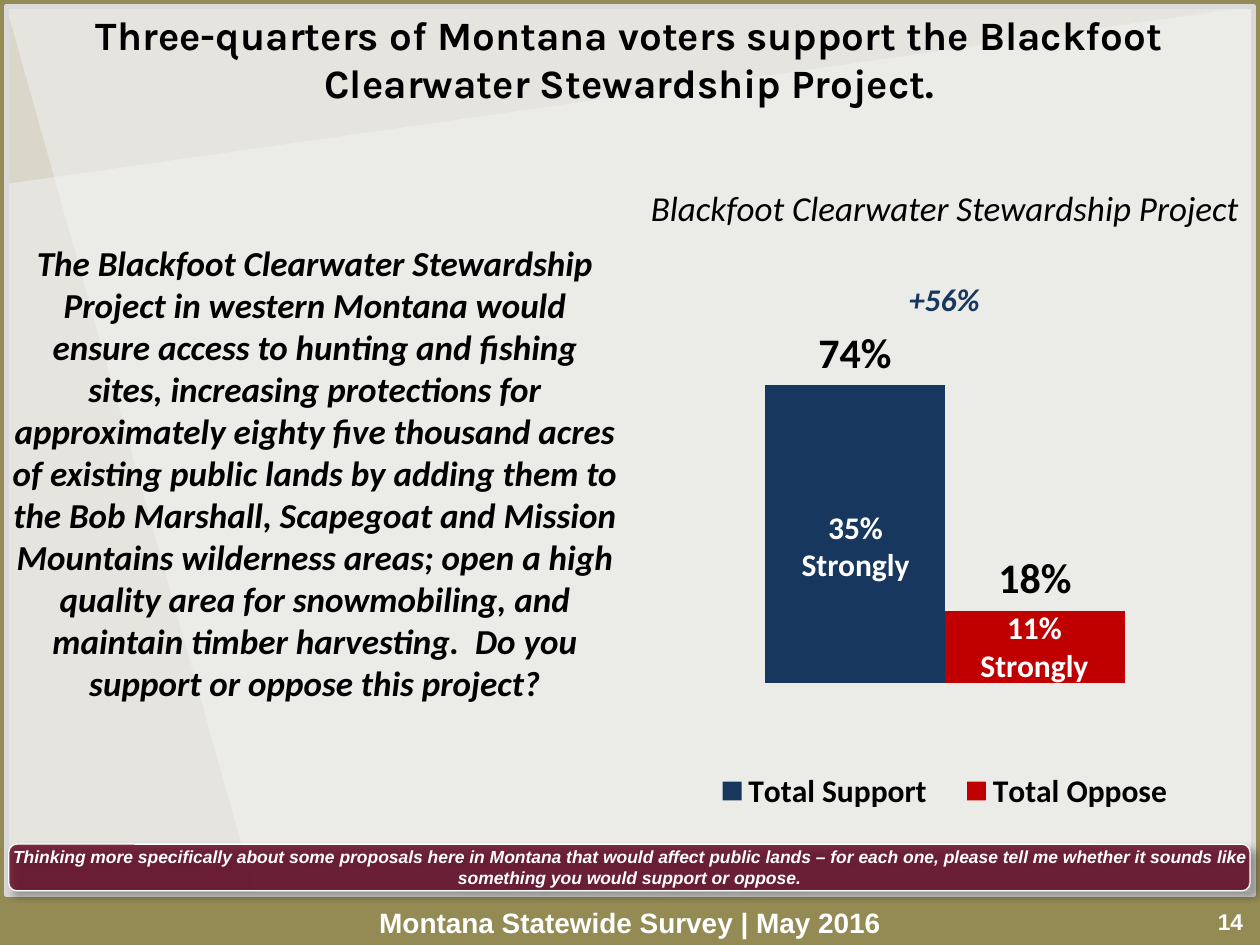
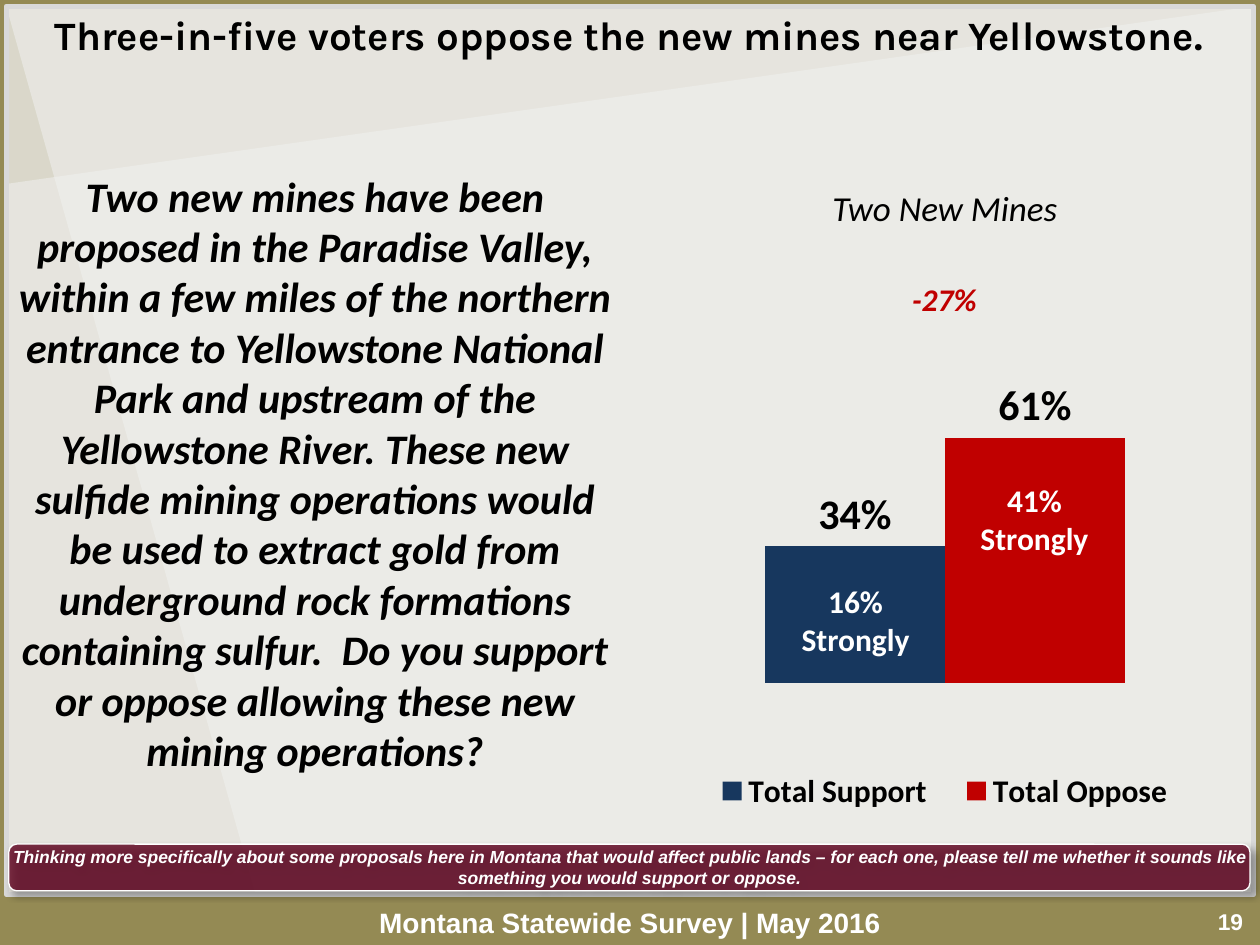
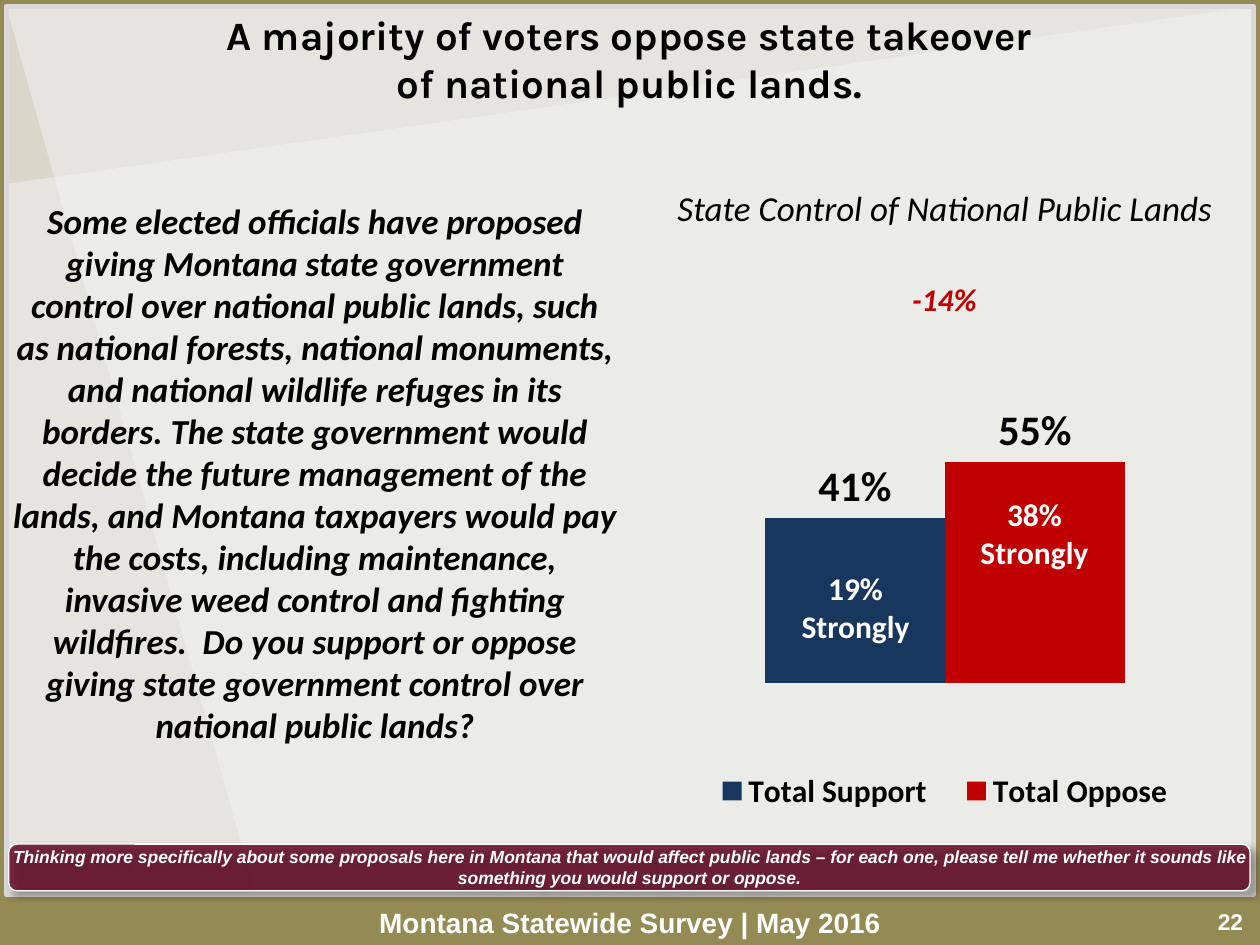
from collections import namedtuple

from lxml import etree
from pptx import Presentation
from pptx.chart.data import CategoryChartData
from pptx.dml.color import RGBColor
from pptx.enum.chart import XL_CHART_TYPE, XL_LABEL_POSITION, XL_LEGEND_POSITION
from pptx.enum.shapes import MSO_SHAPE
from pptx.enum.text import MSO_ANCHOR, PP_ALIGN
from pptx.oxml import parse_xml
from pptx.oxml.ns import nsdecls, qn
from pptx.util import Inches, Pt

COLORS = {
    "frame": "948A54",
    "panel": "F2F2F2",
    "panel_line": "D9D9D9",
    "band": "5E001D",
    "support": "17375E",
    "oppose": "C00000",
    "black": "000000",
    "white": "FFFFFF",
}
TITLE_FONT, BODY_FONT, FOOTER_FONT = "Karla", "Calibri", "Arial"

Box = namedtuple("Box", "left top width height")
PANEL = Box(0.05, 0.05, 9.9, 7.05)
TITLE = Box(0.05, 0.08, 9.9, 0.77)
QUESTION = Box(0, 1.25, 5, 5)
RESULTS = Box(5, 0.55, 5, 6.33)
BAND = Box(0.07, 6.7, 9.85, 0.37)
FOOTER = Box(0, 7.13, 10, 0.37)

FOOTER_TEXT = "Montana Statewide Survey | May 2016"
BAND_TEXT = (
    "Thinking more specifically about some proposals here in Montana that would "
    "affect public lands – for each one, please tell me whether it sounds like "
    "something you would support or oppose."
)

# Bars: name, color key, total percent, strong percent, top of the strong label
Bar = namedtuple("Bar", "name color total strong label_top")
Survey = namedtuple("Survey", "number title question size topic bars")


def support(*values):
    return Bar("Total Support", "support", *values)


def oppose(*values):
    return Bar("Total Oppose", "oppose", *values)


SURVEYS = [
    Survey(
        14,
        ["Three-quarters of Montana voters support the Blackfoot Clearwater "
         "Stewardship Project."],
        "The Blackfoot Clearwater Stewardship Project in western Montana would ensure "
        "access to hunting and fishing sites, increasing protections for approximately "
        "eighty five thousand acres of existing public lands by adding them to the Bob "
        "Marshall, Scapegoat and Mission Mountains wilderness areas; open a high quality "
        "area for snowmobiling, and maintain timber harvesting.  Do you support or "
        "oppose this project?",
        20,
        "Blackfoot Clearwater Stewardship Project",
        [support(74, 35, 3.98), oppose(18, 11, 4.78)],
    ),
    Survey(
        19,
        ["Three-in-five voters oppose the new mines near Yellowstone."],
        "Two new mines have been proposed in the Paradise Valley, within a few miles of "
        "the northern entrance to Yellowstone National Park and upstream of the "
        "Yellowstone River. These new sulfide mining operations would be used to extract "
        "gold from underground rock formations containing sulfur.  Do you support or "
        "oppose allowing these new mining operations?",
        24,
        "Two New Mines",
        [support(34, 16, 4.57), oppose(61, 41, 3.77)],
    ),
    Survey(
        22,
        ["A majority of voters oppose state takeover", "of national public lands."],
        "Some elected officials have proposed giving Montana state government control "
        "over national public lands, such as national forests, national monuments, and "
        "national wildlife refuges in its borders. The state government would decide the "
        "future management of the lands, and Montana taxpayers would pay the costs, "
        "including maintenance, invasive weed control and fighting wildfires.  Do you "
        "support or oppose giving state government control over national public lands?",
        20,
        "State Control of National Public Lands",
        [support(41, 19, 4.47), oppose(55, 38, 3.88)],
    ),
]


def rgb(name):
    return RGBColor.from_string(COLORS[name])


def inches(box):
    return [Inches(length) for length in box]


def write(shape, lines, size, font=BODY_FONT, color="black", bold=True, italic=False,
          anchor=MSO_ANCHOR.TOP, inset=True):
    frame = shape.text_frame
    frame.word_wrap = True
    frame.vertical_anchor = anchor
    if not inset:
        frame.margin_left = frame.margin_right = 0
        frame.margin_top = frame.margin_bottom = 0
    frame.text = "\n".join(lines)
    for paragraph in frame.paragraphs:
        paragraph.alignment = PP_ALIGN.CENTER
        paragraph.font.name = font
        paragraph.font.size = Pt(size)
        paragraph.font.bold = bold
        paragraph.font.italic = italic
        paragraph.font.color.rgb = rgb(color)


def add_text(slide, box, lines, size, **style):
    write(slide.shapes.add_textbox(*inches(box)), lines, size, **style)


def add_filled(slide, kind, box, color, opacity, line=None, line_width=0):
    """Add a see-through preset shape without a shadow."""
    shape = slide.shapes.add_shape(kind, *inches(box))
    shape.shadow.inherit = False
    shape.fill.solid()
    shape.fill.fore_color.rgb = rgb(color)
    fill_color = shape.fill._xPr.find(qn("a:solidFill"))[0]
    etree.SubElement(fill_color, qn("a:alpha"), val=str(opacity * 1000))
    if line:
        shape.line.color.rgb = rgb(line)
        shape.line.width = Pt(line_width)
    else:
        shape.line.fill.background()
    return shape


def add_backdrop(slide, box):
    slide.background.fill.solid()
    slide.background.fill.fore_color.rgb = rgb("frame")
    add_filled(slide, MSO_SHAPE.FLOWCHART_MANUAL_INPUT, box, "panel", 50)
    shift = (box.width - box.height) / 2
    upright = Box(box.left + shift, box.top - shift, box.height, box.width)
    turned = add_filled(slide, MSO_SHAPE.FLOWCHART_MANUAL_INPUT, upright, "panel", 50)
    turned.rotation = 270
    add_filled(slide, MSO_SHAPE.RECTANGLE, box, "panel", 75, "panel_line", 3)


def add_footer(slide, box, number):
    style = dict(font=FOOTER_FONT, color="white")
    add_text(slide, Box(box.left + 1.25, box.top, 7.5, box.height), [FOOTER_TEXT], 16,
             anchor=MSO_ANCHOR.BOTTOM, **style)
    add_text(slide, Box(box.left + 9.49, box.top + 0.02, 0.55, 0.32), [str(number)], 13,
             anchor=MSO_ANCHOR.MIDDLE, **style)


def add_band(slide, box):
    band = add_filled(slide, MSO_SHAPE.ROUNDED_RECTANGLE, box, "band", 80, "white", 0.75)
    effects = band._element.spPr.find(qn("a:effectLst"))
    effects.append(parse_xml(
        f'<a:outerShdw {nsdecls("a")} blurRad="{Pt(4)}" dist="{Pt(3)}" dir="2700000" '
        f'algn="tl" rotWithShape="0"><a:srgbClr val="{COLORS["black"]}">'
        '<a:alpha val="40000"/></a:srgbClr></a:outerShdw>'))
    write(band, [BAND_TEXT], 10, font=FOOTER_FONT, color="white", italic=True,
          anchor=MSO_ANCHOR.BOTTOM, inset=False)


def chart_layout(box, inner=False):
    """Return a manual layout whose box is given in shares of the chart."""
    target = '<c:layoutTarget val="inner"/>' if inner else ""
    modes = '<c:xMode val="edge"/><c:yMode val="edge"/>'
    sizes = "".join(f'<c:{tag} val="{share}"/>' for tag, share in zip("xywh", box))
    return parse_xml(f'<c:layout {nsdecls("c")}><c:manualLayout>{target}{modes}{sizes}'
                     '</c:manualLayout></c:layout>')


def no_fill():
    return parse_xml(f'<c:spPr {nsdecls("c", "a")}><a:noFill/>'
                     '<a:ln><a:noFill/></a:ln></c:spPr>')


def add_bar_chart(slide, box, bars):
    data = CategoryChartData(number_format="0%")
    data.categories = ["1"]
    for bar in bars:
        data.add_series(bar.name, [bar.total / 100])
    chart = slide.shapes.add_chart(
        XL_CHART_TYPE.COLUMN_CLUSTERED, *inches(box), data).chart
    chart.has_title = False
    chart.font.name = BODY_FONT
    chart.font.size = Pt(18)
    chart.font.bold = True
    chart.font.color.rgb = rgb("black")

    chart.value_axis.minimum_scale = 0
    chart.value_axis.maximum_scale = 1
    chart.value_axis.has_major_gridlines = False
    for axis in (chart.category_axis, chart.value_axis):
        axis.visible = False

    plot = chart.plots[0]
    plot.vary_by_categories = False
    plot.gap_width = 150
    plot.overlap = 0
    for series, bar in zip(plot.series, bars):
        series.format.fill.solid()
        series.format.fill.fore_color.rgb = rgb(bar.color)
        labels = series.data_labels
        labels.show_value = True
        labels.position = XL_LABEL_POSITION.OUTSIDE_END
        labels.number_format = "0%"
        labels.number_format_is_linked = False
        labels.font.size = Pt(24)
        labels.font.bold = True

    chart.has_legend = True
    chart.legend.position = XL_LEGEND_POSITION.BOTTOM
    chart.legend.include_in_layout = False
    chart.legend.font.size = Pt(18)
    legend = chart.legend._element
    for layout in legend.findall(qn("c:layout")):
        legend.remove(layout)
    legend.find(qn("c:legendPos")).addnext(chart_layout(Box(0.1, 0.865, 0.8, 0.08)))

    chart_part = chart._chartSpace.find(qn("c:chart"))
    plot_area = chart_part.find(qn("c:plotArea"))
    for layout in plot_area.findall(qn("c:layout")):
        plot_area.remove(layout)
    plot_area.insert(0, chart_layout(Box(0, 0.265, 1, 0.505), inner=True))
    plot_area.append(no_fill())
    chart_part.addnext(no_fill())


def add_results(slide, box, survey):
    """Add the chart, its topic, the strong shares and the net support."""
    add_bar_chart(slide, box, survey.bars)
    add_text(slide, Box(box.left, box.top + 0.88, box.width, 0.44), [survey.topic], 20,
             bold=False, italic=True)
    middle = box.left + box.width / 2
    label_width = 1.42
    for index, bar in enumerate(survey.bars):
        label = Box(middle + (index - 1) * label_width, bar.label_top, label_width, 0.71)
        add_text(slide, label, [f"{bar.strong}%", "Strongly"], 18, color="white")
    net = survey.bars[0].total - survey.bars[1].total
    add_text(slide, Box(middle - 0.42, box.top + 1.62, 0.83, 0.4), [f"{net:+d}%"], 18,
             color="support" if net > 0 else "oppose", italic=True)


def add_survey_slide(presentation, survey):
    slide = presentation.slides.add_slide(presentation.slide_layouts[6])
    add_backdrop(slide, PANEL)
    add_footer(slide, FOOTER, survey.number)
    add_text(slide, TITLE, survey.title, 23, font=TITLE_FONT, inset=False)
    add_results(slide, RESULTS, survey)
    add_text(slide, QUESTION, [survey.question], survey.size, italic=True,
             anchor=MSO_ANCHOR.MIDDLE)
    add_band(slide, BAND)


def main():
    presentation = Presentation()
    presentation.slide_width = Inches(10)
    presentation.slide_height = Inches(7.5)
    for survey in SURVEYS:
        add_survey_slide(presentation, survey)
    presentation.save("out.pptx")


if __name__ == "__main__":
    main()
